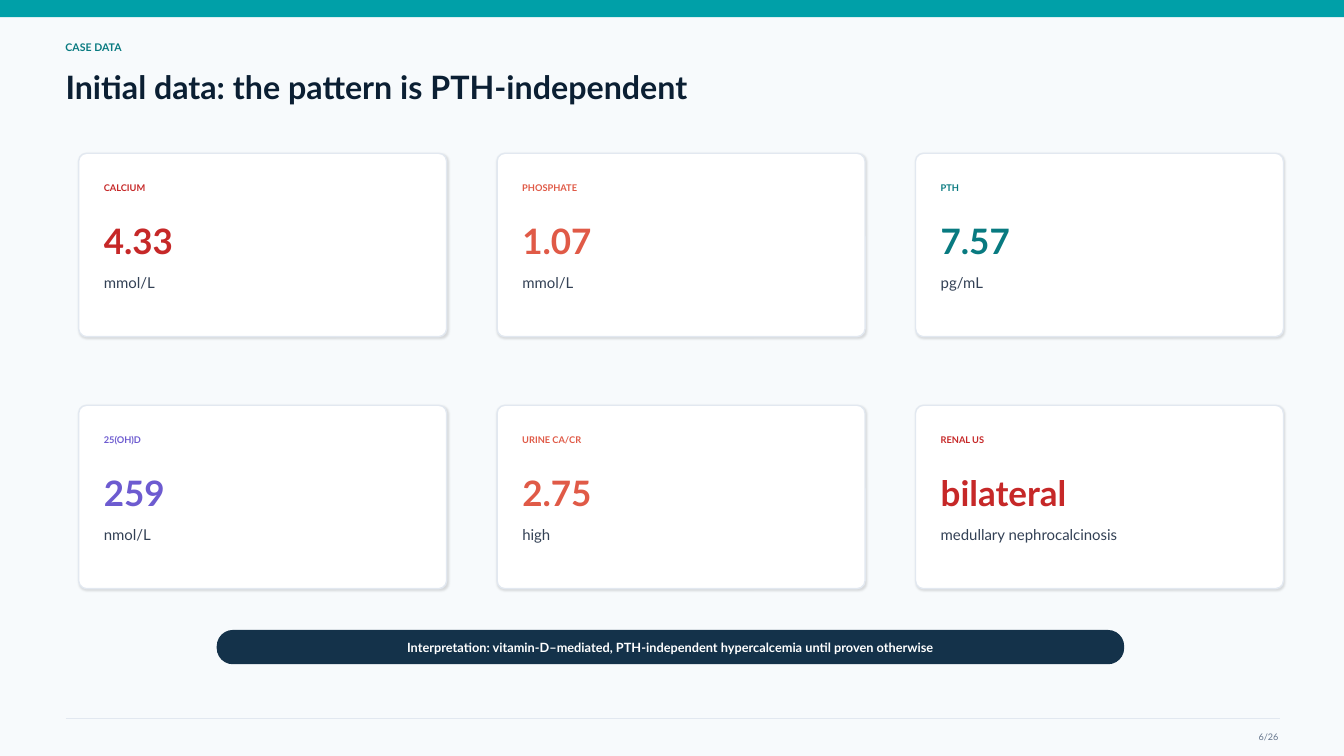
from lxml.etree import SubElement
from pptx import Presentation
from pptx.dml.color import RGBColor
from pptx.enum.shapes import MSO_CONNECTOR, MSO_SHAPE
from pptx.enum.text import MSO_ANCHOR, MSO_AUTO_SIZE, PP_ALIGN
from pptx.oxml.ns import qn
from pptx.util import Inches, Pt

BACKGROUND = RGBColor(0xF7, 0xFA, 0xFC)
BAND = RGBColor(0x00, 0xA0, 0xA8)
TEAL = RGBColor(0x08, 0x7A, 0x80)
INK = RGBColor(0x0B, 0x1F, 0x33)
NAVY = RGBColor(0x14, 0x32, 0x4A)
SLATE = RGBColor(0x33, 0x41, 0x55)
MUTED = RGBColor(0x64, 0x74, 0x8B)
RULE = RGBColor(0xE2, 0xE8, 0xF0)
WHITE = RGBColor(0xFF, 0xFF, 0xFF)
RED = RGBColor(0xC6, 0x28, 0x28)
CORAL = RGBColor(0xE0, 0x5A, 0x47)
VIOLET = RGBColor(0x6D, 0x5B, 0xD0)

FINDINGS = [
    ("CALCIUM", "4.33", "mmol/L", RED),
    ("PHOSPHATE", "1.07", "mmol/L", CORAL),
    ("PTH", "7.57", "pg/mL", TEAL),
    ("25(OH)D", "259", "nmol/L", VIOLET),
    ("URINE CA/CR", "2.75", "high", CORAL),
    ("RENAL US", "bilateral", "medullary nephrocalcinosis", RED),
]
COLUMNS = 3
CARD_LEFT, CARD_TOP = 0.78, 1.52
CARD_WIDTH, CARD_HEIGHT = 3.65, 1.82
COLUMN_STEP, ROW_STEP = 4.15, 2.5
CARD_PADDING = 0.25


class SlideBuilder:
    font_name = "Lato"

    def __init__(self, slide):
        self.slide = slide
        slide.background.fill.solid()
        slide.background.fill.fore_color.rgb = BACKGROUND

    def fill_text(self, holder, text, size, color, bold=False, align=PP_ALIGN.LEFT):
        frame = holder.text_frame
        frame.word_wrap = True
        frame.auto_size = MSO_AUTO_SIZE.NONE
        frame.vertical_anchor = MSO_ANCHOR.MIDDLE
        frame.margin_left = frame.margin_right = 0
        frame.margin_top = frame.margin_bottom = 0
        paragraph = frame.paragraphs[0]
        paragraph.alignment = align
        run = paragraph.add_run()
        run.text = text
        run.font.name = self.font_name
        run.font.size = Pt(size)
        run.font.bold = bold
        run.font.color.rgb = color

    def title(self, left, top, width, height, text, size, color):
        heading = self.slide.shapes.title
        heading.left, heading.top = Inches(left), Inches(top)
        heading.width, heading.height = Inches(width), Inches(height)
        self.fill_text(heading, text, size, color, bold=True)

    def text(self, left, top, width, height, text, size, color, **style):
        box = self.slide.shapes.add_textbox(
            Inches(left), Inches(top), Inches(width), Inches(height))
        self.fill_text(box, text, size, color, **style)

    def panel(self, left, top, width, height, fill, radius=None, outline=None):
        kind = MSO_SHAPE.RECTANGLE if radius is None else MSO_SHAPE.ROUNDED_RECTANGLE
        panel = self.slide.shapes.add_shape(
            kind, Inches(left), Inches(top), Inches(width), Inches(height))
        if radius is not None:
            panel.adjustments[0] = radius / height
        panel.shadow.inherit = False
        panel.fill.solid()
        panel.fill.fore_color.rgb = fill
        if outline is None:
            panel.line.fill.background()
        else:
            panel.line.color.rgb = outline
            panel.line.width = Pt(1)
        return panel

    def soft_shadow(self, panel):
        effects = panel._element.spPr.find(qn("a:effectLst"))
        shadow = SubElement(effects, qn("a:outerShdw"), blurRad=str(Pt(1.5)),
                            dist=str(Pt(0.7)), dir=str(45 * 60000),
                            algn="bl", rotWithShape="0")
        color = SubElement(shadow, qn("a:srgbClr"), val="000000")
        SubElement(color, qn("a:alpha"), val="12000")

    def rule(self, left, right, y):
        rule = self.slide.shapes.add_connector(
            MSO_CONNECTOR.STRAIGHT, Inches(left), Inches(y), Inches(right), Inches(y))
        rule.line.color.rgb = RULE
        rule.line.width = Pt(1)
        SubElement(rule._element.spPr, qn("a:effectLst"))

    def card(self, left, top, label, value, detail, accent):
        panel = self.panel(left, top, CARD_WIDTH, CARD_HEIGHT, WHITE, 0.08, RULE)
        self.soft_shadow(panel)
        inner = left + CARD_PADDING
        self.text(inner, top + 0.24, 2.8, 0.2, label, 6.6, accent, bold=True)
        self.text(inner, top + 0.64, 3.08, 0.45, value, 25, accent, bold=True)
        self.text(inner, top + 1.15, 3.05, 0.27, detail, 10.7, SLATE)


def main():
    deck = Presentation()
    deck.slide_width, deck.slide_height = Inches(13.33), Inches(7.5)
    builder = SlideBuilder(deck.slides.add_slide(deck.slide_layouts[5]))

    builder.panel(0, 0, 13.33, 0.17, BAND)
    builder.text(0.65, 0.34, 2.6, 0.25, "CASE DATA", 7.5, TEAL, bold=True)
    builder.title(0.65, 0.57, 10.8, 0.58,
                  "Initial data: the pattern is PTH-independent", 23, INK)
    builder.rule(0.65, 12.7, 7.13)
    builder.text(12.08, 7.22, 0.6, 0.18, "6/26", 6.5, MUTED, align=PP_ALIGN.RIGHT)

    for index, finding in enumerate(FINDINGS):
        row, column = divmod(index, COLUMNS)
        builder.card(CARD_LEFT + column * COLUMN_STEP,
                     CARD_TOP + row * ROW_STEP, *finding)

    builder.panel(2.15, 6.25, 9, 0.34, NAVY, 0.16)
    builder.text(2.23, 6.33, 8.84, 0.18,
                 "Interpretation: vitamin-D–mediated, PTH-independent "
                 "hypercalcemia until proven otherwise",
                 9.1, WHITE, bold=True, align=PP_ALIGN.CENTER)

    deck.save("out.pptx")


if __name__ == "__main__":
    main()
